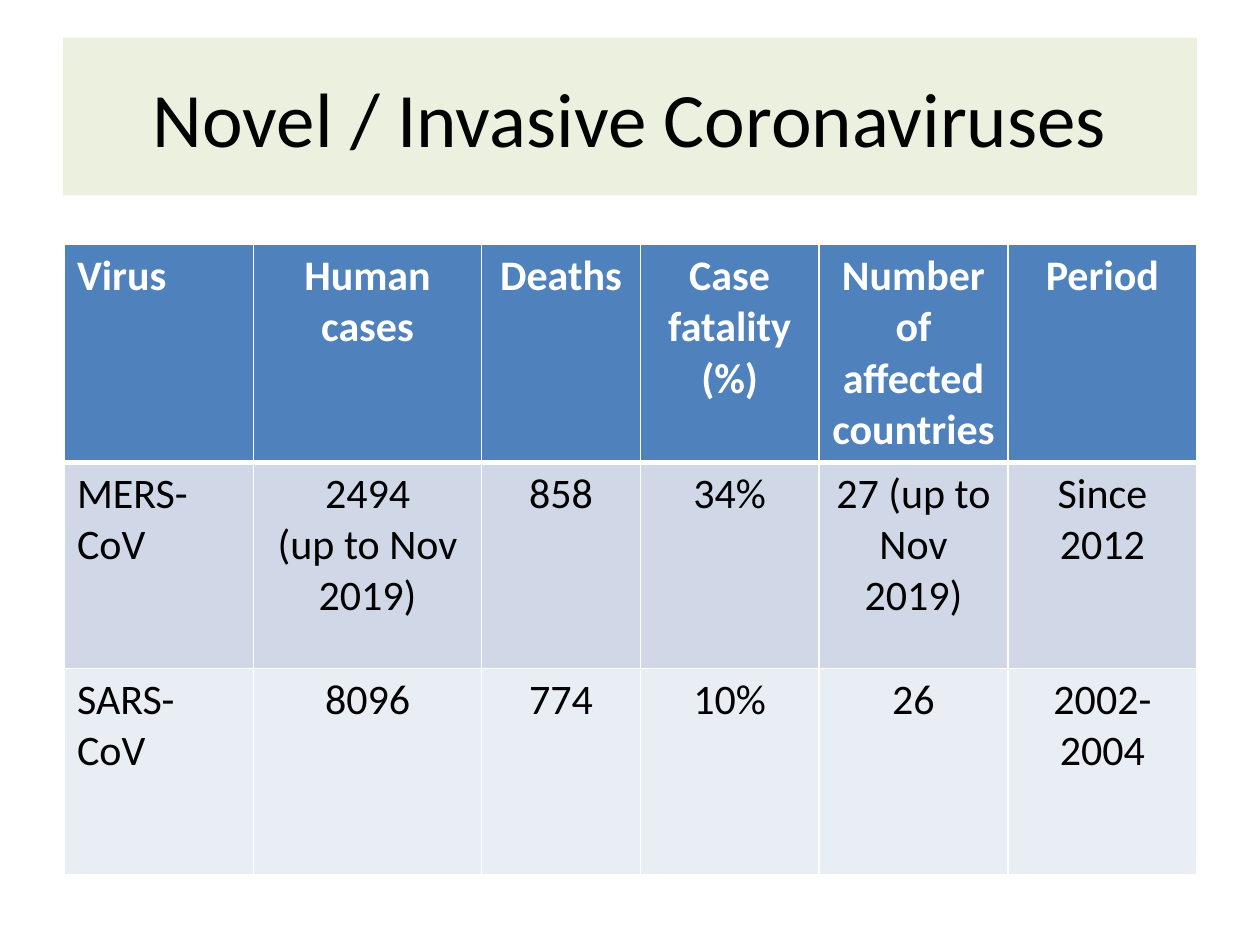
from dataclasses import dataclass

import pptx
import pptx.dml.color
import pptx.enum.text
import pptx.oxml
import pptx.oxml.ns
import pptx.util

Cm = pptx.util.Cm
Pt = pptx.util.Pt
RGBColor = pptx.dml.color.RGBColor
PP_ALIGN = pptx.enum.text.PP_ALIGN

FONT = "Calibri"
BLACK = RGBColor(0x00, 0x00, 0x00)
WHITE = RGBColor(0xFF, 0xFF, 0xFF)
TITLE_GREEN = RGBColor(0xEB, 0xF1, 0xDE)
HEADER_BLUE = RGBColor(0x4F, 0x81, 0xBD)
BAND_DARK = RGBColor(0xD0, 0xD8, 0xE8)
BAND_LIGHT = RGBColor(0xE9, 0xED, 0xF4)


@dataclass
class VirusRow:
    texts: tuple[str, ...]
    height: float
    fill: RGBColor
    color: RGBColor = BLACK
    bold: bool = False
    top_line: float = 1
    bottom_line: float = 1


COLUMN_WIDTHS = (3.81, 4.6, 3.2, 3.6, 3.81, 3.81)
ROWS = (
    VirusRow(("Virus", "Human cases", "Deaths", "Case fatality (%)",
              "Number of affected countries", "Period"),
             3.48, HEADER_BLUE, WHITE, bold=True, bottom_line=3),
    VirusRow(("MERS-CoV", "2494\n(up to Nov 2019)", "858", "34%",
              "27 (up to Nov 2019)", "Since 2012"),
             4.16, BAND_DARK, top_line=3),
    VirusRow(("SARS-CoV", "8096", "774", "10%", "26", "2002-2004"),
             4.16, BAND_LIGHT),
)


def format_text(frame, size: float, color: RGBColor, bold: bool, align) -> None:
    for paragraph in frame.paragraphs:
        paragraph.alignment = align
        for span in paragraph.runs:
            span.font.name = FONT
            span.font.size = Pt(size)
            span.font.bold = bold
            span.font.color.rgb = color


def add_borders(cell, top: float, bottom: float) -> None:
    properties = cell._tc.get_or_add_tcPr()
    for side, width in (("L", 1), ("R", 1), ("T", top), ("B", bottom)):
        properties.append(pptx.oxml.parse_xml(
            f'<a:ln{side} {pptx.oxml.ns.nsdecls("a")} w="{Pt(width)}">'
            f'<a:solidFill><a:srgbClr val="{WHITE}"/></a:solidFill></a:ln{side}>'))


def add_title(page, text: str) -> None:
    box = page.shapes.title
    box.left, box.top, box.width, box.height = Cm(1.27), Cm(0.76), Cm(22.86), Cm(3.18)
    box.fill.solid()
    box.fill.fore_color.rgb = TITLE_GREEN
    box.text_frame.text = text
    box.text_frame.vertical_anchor = pptx.enum.text.MSO_ANCHOR.MIDDLE
    format_text(box.text_frame, 44, BLACK, False, PP_ALIGN.CENTER)


def add_virus_table(page, rows: tuple[VirusRow, ...]) -> None:
    table = page.shapes.add_table(
        len(rows), len(COLUMN_WIDTHS), Cm(1.3), Cm(4.93),
        Cm(sum(COLUMN_WIDTHS)), Cm(sum(row.height for row in rows))).table
    for column, width in zip(table.columns, COLUMN_WIDTHS):
        column.width = Cm(width)
    for row_index, row in enumerate(rows):
        table.rows[row_index].height = Cm(row.height)
        for column_index, text in enumerate(row.texts):
            cell = table.cell(row_index, column_index)
            add_borders(cell, row.top_line, row.bottom_line)
            cell.fill.solid()
            cell.fill.fore_color.rgb = row.fill
            cell.text_frame.text = text
            align = PP_ALIGN.CENTER if column_index else PP_ALIGN.LEFT
            format_text(cell.text_frame, 24, row.color, row.bold, align)


def main() -> None:
    deck = pptx.Presentation()
    deck.slide_width, deck.slide_height = Cm(25.4), Cm(19.05)
    # The "Title Only" layout
    page = deck.slides.add_slide(deck.slide_layouts[5])
    add_title(page, "Novel / Invasive Coronaviruses")
    add_virus_table(page, ROWS)
    deck.save("out.pptx")


if __name__ == "__main__":
    main()
